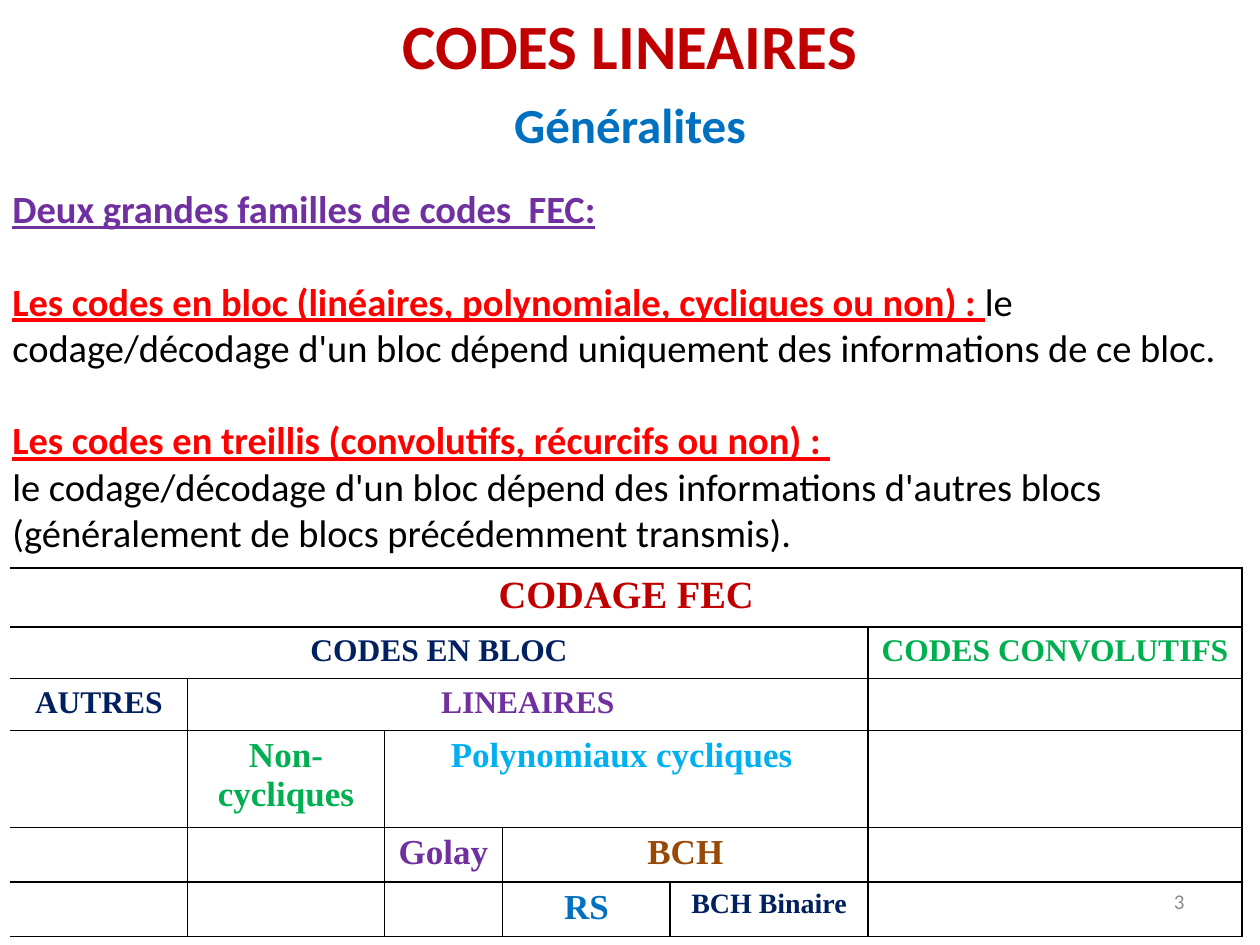
from lxml.etree import SubElement
from pptx import Presentation
from pptx.dml.color import RGBColor
from pptx.enum.text import MSO_ANCHOR, PP_ALIGN
from pptx.oxml.ns import qn
from pptx.util import Inches, Pt

THEME = {
    "sans": "Calibri", "serif": "Times New Roman",
    "title": 36, "subtitle": 28, "body": 22, "group": 18, "family": 20, "leaf": 16, "number": 12,
    "crimson": "C00000", "red": "FF0000", "blue": "0070C0", "sky": "00B0F0", "navy": "002060",
    "purple": "7030A0", "green": "00B050", "brown": "984807", "black": "000000", "grey": "8C8C8C",
}

deck = Presentation()
deck.slide_width, deck.slide_height = Inches(10), Inches(7.5)
page = deck.slides.add_slide(deck.slide_layouts[5])
UNIT = deck.slide_width / 100


def grid(*counts):
    return [round(count * UNIT) for count in counts]


def write(para, text, size, color, font="sans", bold=True, underline=False):
    span = para.add_run()
    span.text = text
    values = {"name": THEME[font], "size": Pt(THEME[size]), "bold": bold, "underline": underline}
    for name, value in values.items():
        setattr(span.font, name, value)
    span.font.color.rgb = RGBColor.from_string(THEME[color])


title = page.shapes.title
title.left, title.top, title.width, title.height = grid(0, 0, 100, 7.1)
families, subtitle, number = [
    page.shapes.add_textbox(*grid(*place))
    for place in [(0, 14.2, 100, 30.6), (0, 7, 100, 8.8), (71.7, 69.5, 23.3, 4)]
]

for box, text, size, color, bold, align, anchor in [
    (title, "CODES LINEAIRES", "title", "crimson", True, PP_ALIGN.CENTER, MSO_ANCHOR.TOP),
    (subtitle, "Généralites", "subtitle", "blue", True, PP_ALIGN.CENTER, MSO_ANCHOR.TOP),
    (number, "3", "number", "grey", False, PP_ALIGN.RIGHT, MSO_ANCHOR.MIDDLE),
]:
    frame = box.text_frame
    frame.word_wrap, frame.vertical_anchor = True, anchor
    frame.paragraphs[0].alignment = align
    write(frame.paragraphs[0], text, size, color, bold=bold)

heading = {"bold": True, "underline": True}
plain = {"bold": False, "underline": False}
paragraphs = [
    (0, [("Deux grandes familles de codes  FEC:", "purple", heading)]),
    (26.5, [
        ("Les codes en bloc (linéaires, polynomiale, cycliques ou non) : ", "red", heading),
        ("le codage/décodage d'un bloc dépend uniquement des informations de ce bloc.", "black", plain),
    ]),
    (26.5, [("Les codes en treillis (convolutifs, récurcifs ou non) : ", "red", heading)]),
    (0, [("le codage/décodage d'un bloc dépend des informations d'autres blocs "
          "(généralement de blocs précédemment transmis).", "black", plain)]),
]
frame = families.text_frame
frame.word_wrap = True
for index, (gap, spans) in enumerate(paragraphs):
    para = frame.add_paragraph() if index else frame.paragraphs[0]
    para.space_before = Pt(gap)
    for text, color, style in spans:
        write(para, text, "body", color, **style)

column_widths = grid(14.1, 15.6, 9.4, 13.3, 15.7, 29.7)
row_heights = grid(4.6, 4.1, 4.1, 7.7, 4.3, 4.3)
tree = page.shapes.add_table(
    len(row_heights), len(column_widths), *grid(0.8, 45.1),
    sum(column_widths), sum(row_heights),
).table
tree.first_row = tree.horz_banding = False
for column, width in zip(tree.columns, column_widths):
    column.width = width
for row, height in zip(tree.rows, row_heights):
    row.height = height

for row_index, row in enumerate(tree.rows):
    for column_index, cell in enumerate(row.cells):
        cell.fill.background()
        properties = cell._tc.get_or_add_tcPr()
        for order, side in enumerate(["lnL", "lnR", "lnT", "lnB"]):
            line = SubElement(properties, qn(f"a:{side}"), w=str(Pt(1)))
            if side == "lnL" and column_index == 0:
                SubElement(line, qn("a:noFill"))
            else:
                SubElement(SubElement(line, qn("a:solidFill")), qn("a:srgbClr"), val=THEME["black"])
            properties.insert(order, line)

for row, column, width, text, size, color in [
    (0, 0, 6, "CODAGE FEC", "body", "crimson"),
    (1, 0, 5, "CODES EN BLOC", "group", "navy"),
    (1, 5, 1, "CODES CONVOLUTIFS", "group", "green"),
    (2, 0, 1, "AUTRES", "group", "navy"),
    (2, 1, 4, "LINEAIRES", "group", "purple"),
    (3, 1, 1, "Non-cycliques", "family", "green"),
    (3, 2, 3, "Polynomiaux cycliques ", "family", "sky"),
    (4, 2, 1, "Golay", "family", "purple"),
    (4, 3, 2, "BCH", "family", "brown"),
    (5, 3, 1, "RS", "family", "blue"),
    (5, 4, 1, "BCH Binaire", "leaf", "navy"),
]:
    cell = tree.cell(row, column)
    if width > 1:
        cell.merge(tree.cell(row, column + width - 1))
    para = cell.text_frame.paragraphs[0]
    para.alignment = PP_ALIGN.CENTER
    write(para, text, size, color, font="serif")

deck.save("out.pptx")
